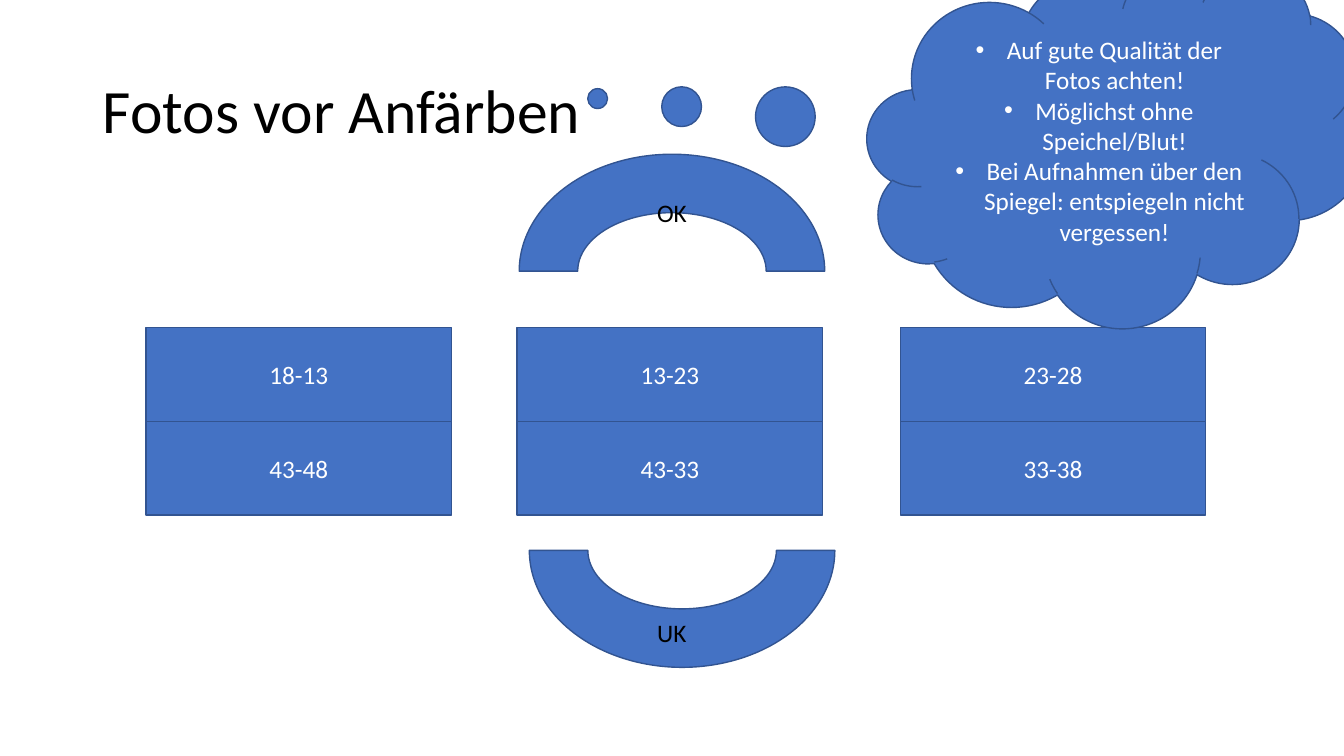
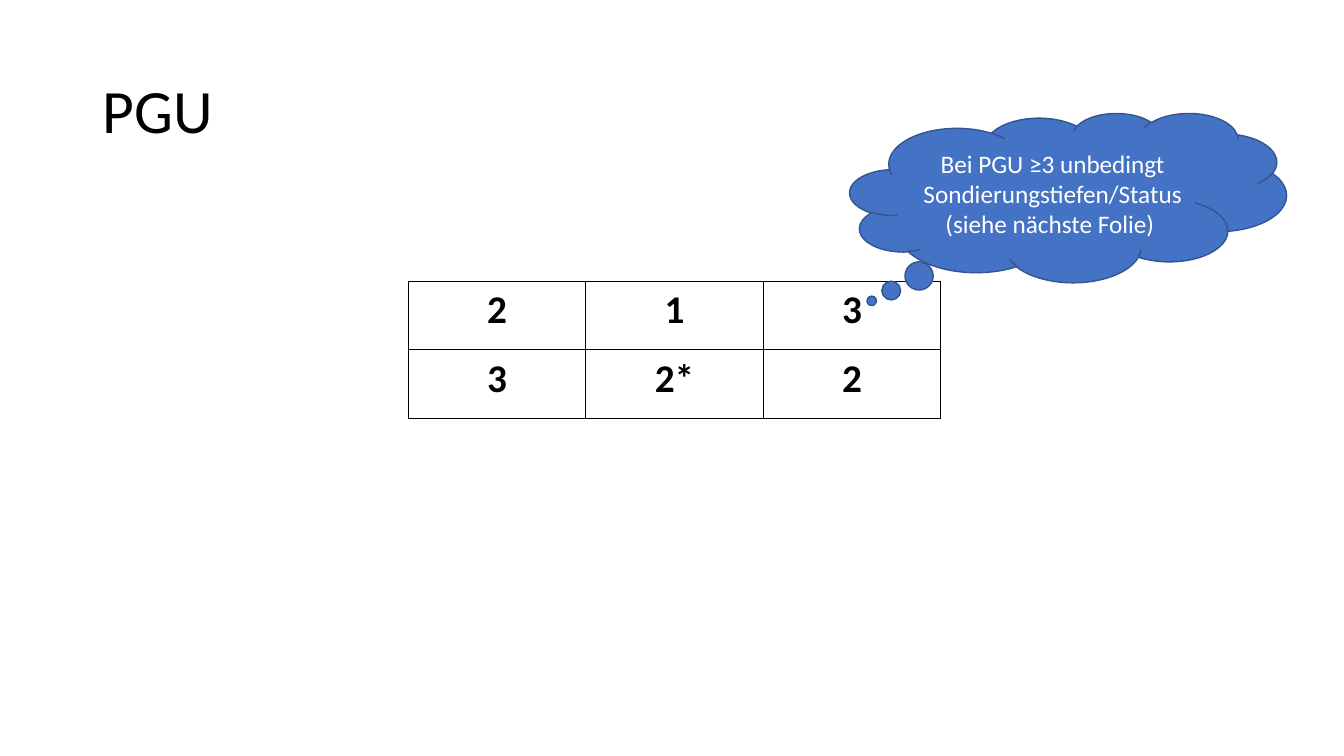
from lxml import etree
from pptx import Presentation
from pptx.dml.color import RGBColor
from pptx.enum.shapes import MSO_SHAPE
from pptx.enum.text import MSO_ANCHOR, MSO_AUTO_SIZE, PP_ALIGN
from pptx.oxml.ns import qn
from pptx.util import Inches, Pt

RECT, ARC, CLOUD = MSO_SHAPE.RECTANGLE, MSO_SHAPE.BLOCK_ARC, MSO_SHAPE.CLOUD_CALLOUT
LEFT, CENTER = PP_ALIGN.LEFT, PP_ALIGN.CENTER
MIDDLE = MSO_ANCHOR.MIDDLE
NO_FIT, GROW = MSO_AUTO_SIZE.NONE, MSO_AUTO_SIZE.SHAPE_TO_FIT_TEXT


def rgb(value):
    return RGBColor.from_string(value)


class Deck:
    FONT = "Calibri"
    FILL, OUTLINE = "4472C4", "325491"
    BLACK, WHITE = "000000", "FFFFFF"
    TITLE_ONLY = 5

    def __init__(self):
        self.prs = Presentation()
        self.prs.slide_width, self.prs.slide_height = Inches(13.33), Inches(7.5)
        self.s = None

    def new_slide(self, title):
        self.s = self.prs.slides.add_slide(self.prs.slide_layouts[self.TITLE_ONLY])
        sp = self.s.shapes.title
        sp.left, sp.top, sp.width, sp.height = map(Inches, (0.92, 0.4, 11.5, 1.45))
        tf = sp.text_frame
        tf.text = title
        tf.auto_size = NO_FIT
        tf.vertical_anchor = MIDDLE
        self.format_text(tf, 44, self.BLACK, LEFT)
        tf.paragraphs[0].line_spacing = 0.9

    def format_text(self, tf, size, color, align=CENTER, bold=False):
        for p in tf.paragraphs:
            p.alignment = align
            for r in p.runs:
                r.font.name, r.font.size, r.font.bold = self.FONT, Pt(size), bold
                r.font.color.rgb = rgb(color)

    def shape(self, kind, x, y, w, h, text="", color=WHITE):
        sp = self.s.shapes.add_shape(kind, *map(Inches, (x, y, w, h)))
        sp.shadow.inherit = False
        sp.fill.solid()
        sp.fill.fore_color.rgb = rgb(self.FILL)
        sp.line.color.rgb = rgb(self.OUTLINE)
        sp.line.width = Pt(1)
        tf = sp.text_frame
        tf.text = text
        tf.word_wrap = True
        tf.vertical_anchor = MIDDLE
        self.format_text(tf, 18, color)
        return sp

    def cloud(self, x, y, w, h, tail, text, bullets=False):
        """Add a thought cloud; tail is its tip relative to the centre, in cloud sizes."""
        sp = self.shape(CLOUD, x, y, w, h, text)
        sp.adjustments[0], sp.adjustments[1] = tail
        if bullets:
            for p in sp.text_frame.paragraphs:
                self.bullet(p)

    def bullet(self, p):
        pPr = p._p.get_or_add_pPr()
        indent = Inches(0.31)
        pPr.set("marL", str(indent))
        pPr.set("indent", str(-indent))
        etree.SubElement(pPr, qn("a:buFont")).set("typeface", "Arial")
        etree.SubElement(pPr, qn("a:buChar")).set("char", "•")

    def label(self, x, y, w, h, text):
        tf = self.s.shapes.add_textbox(*map(Inches, (x, y, w, h))).text_frame
        tf.text = text
        tf.word_wrap = False
        tf.auto_size = GROW
        self.format_text(tf, 18, self.BLACK, LEFT)

    def table(self, x, y, col_w, row_h, rows):
        n_rows, n_cols = len(rows), len(rows[0])
        size = (col_w * n_cols, row_h * n_rows)
        table = self.s.shapes.add_table(n_rows, n_cols, *map(Inches, (x, y, *size))).table
        table.first_row = table.horz_banding = False
        for i, row in enumerate(rows):
            for j, text in enumerate(row):
                cell = table.cell(i, j)
                cell.text = text
                self.format_text(cell.text_frame, 28, self.BLACK, bold=True)
                self.borders(cell)
                cell.fill.background()

    def borders(self, cell):
        tcPr = cell._tc.get_or_add_tcPr()
        for side in ("lnL", "lnR", "lnT", "lnB"):
            ln = etree.SubElement(tcPr, qn(f"a:{side}"), w=str(Pt(1)))
            fill = etree.SubElement(ln, qn("a:solidFill"))
            etree.SubElement(fill, qn("a:srgbClr")).set("val", self.BLACK)


def photo_slide(deck):
    deck.new_slide("Fotos vor Anfärben")
    w, h = 3.03, 0.93
    columns = {1.45: ("18-13", "43-48"), 5.13: ("13-23", "43-33"), 8.93: ("23-28", "33-38")}
    for x, teeth in columns.items():
        for i, text in enumerate(teeth):
            deck.shape(RECT, x, 3.25 + i * h, w, h, text)
    deck.shape(ARC, 5.15, 1.53, w, 2.32, "OK", deck.BLACK)
    lower_jaw = deck.shape(ARC, 5.25, 4.3, w, 2.32)
    lower_jaw.rotation = 180
    deck.label(6.42, 6.08, 0.49, 0.4, "UK")
    hints = (
        "Auf gute Qualität der Fotos achten!",
        "Möglichst ohne Speichel/Blut!",
        "Bei Aufnahmen über den Spiegel: entspiegeln nicht vergessen!",
    )
    deck.cloud(8.6, -0.3, 4.95, 3.55, (-1.04, -0.14), "\n".join(hints), bullets=True)


def pgu_slide(deck):
    deck.new_slide("PGU")
    deck.table(4.05, 2.79, 1.76, 0.68, (("2", "1", "3"), ("3", "2*", "2")))
    deck.cloud(8.43, 1.12, 4.33, 1.68, (-0.45, 0.61),
               "Bei PGU ≥3 unbedingt Sondierungstiefen/Status (siehe nächste Folie) ")


def main():
    deck = Deck()
    photo_slide(deck)
    pgu_slide(deck)
    deck.prs.save("out.pptx")


if __name__ == "__main__":
    main()
